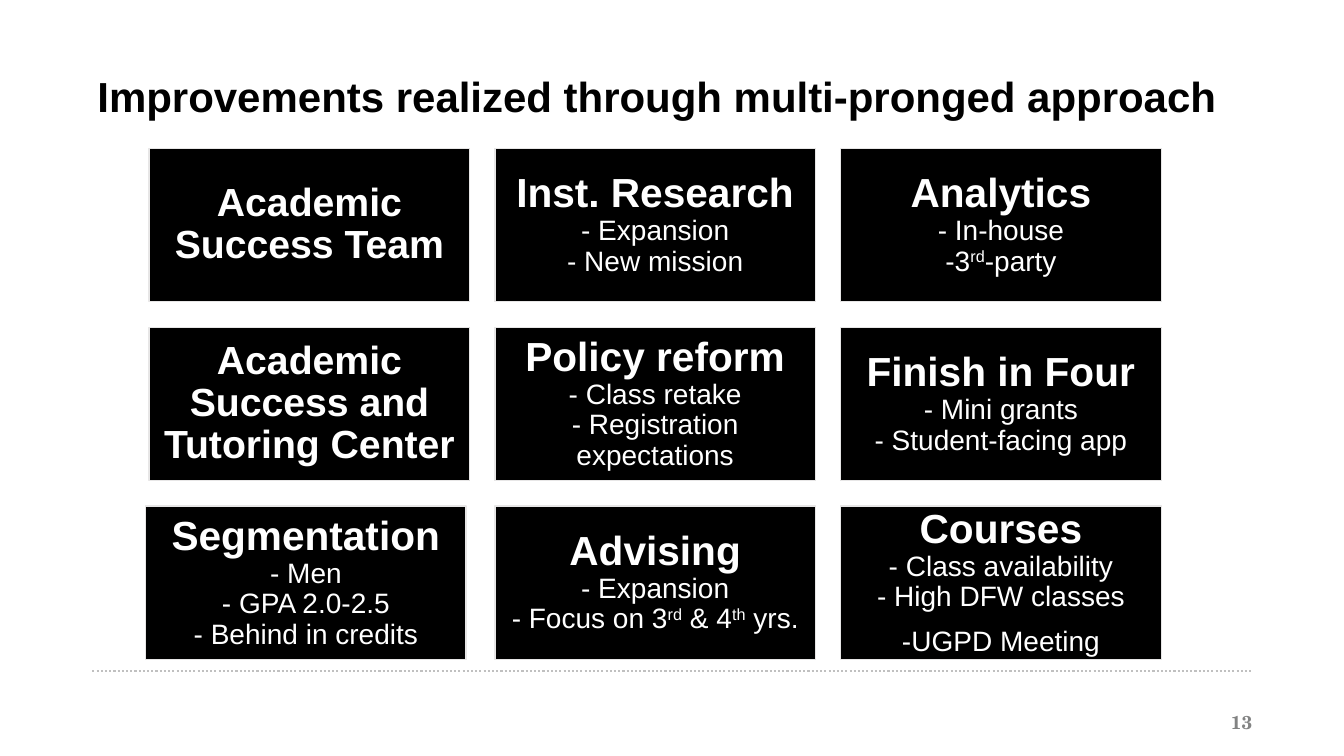
from pptx import Presentation
from pptx.dml.color import RGBColor
from pptx.enum.dml import MSO_LINE
from pptx.enum.shapes import MSO_CONNECTOR, MSO_SHAPE
from pptx.enum.text import MSO_ANCHOR, PP_ALIGN
from pptx.oxml.ns import qn
from pptx.util import Pt
from lxml.etree import SubElement

COLORS = {
    "black": "000000",
    "white": "FFFFFF",
    "border": "E7E6E6",
    "rule": "C0C0C0",
    "number": "828383",
}

CARDS = [
    [("Academic Success Team", []),
     ("Inst. Research", [["- Expansion", "- New mission"]]),
     ("Analytics", [["- In-house", "-3^rd^-party"]])],
    [("Academic Success and Tutoring Center", []),
     ("Policy reform", [["- Class retake", "- Registration expectations"]]),
     ("Finish in Four", [["- Mini grants", "- Student-facing app"]])],
    [("Segmentation", [["- Men", "- GPA 2.0-2.5", "- Behind in credits"]]),
     ("Advising", [["- Expansion", "- Focus on 3^rd^ & 4^th^ yrs."]]),
     ("Courses", [["- Class availability", "- High DFW classes"], ["-UGPD Meeting"]])],
]


def color(name):
    return RGBColor.from_string(COLORS[name])


def style(span, size, tint, bold=False, face="Arial"):
    span.font.name = face
    span.font.size = Pt(size)
    span.font.bold = bold
    span.font.color.rgb = color(tint)


def add_label(page, box, text, size, tint, face="Arial"):
    frame = page.shapes.add_textbox(*map(Pt, box)).text_frame
    frame.word_wrap = True
    frame.text = text
    style(frame.paragraphs[0].runs[0], size, tint, True, face)
    return frame


def add_title(page, box):
    frame = add_label(page, box, "Improvements realized through multi-pronged approach", 30, "black")
    frame.paragraphs[0].line_spacing = 0.8


def add_footer(page, box):
    left, top, width, height = box
    rule = page.shapes.add_connector(
        MSO_CONNECTOR.STRAIGHT, Pt(left), Pt(top), Pt(left + width), Pt(top))
    rule.line.color.rgb = color("rule")
    rule.line.width = Pt(1.5)
    rule.line.dash_style = MSO_LINE.ROUND_DOT
    SubElement(rule._element.spPr, qn("a:effectLst"))

    number_box = (left + width - 194, top + height - 29, 216 - 12, 29)
    frame = add_label(page, number_box, "13", 13.3, "number", "TeX Gyre Schola")
    frame.vertical_anchor = MSO_ANCHOR.MIDDLE
    frame.margin_right = Pt(9.5)
    frame.paragraphs[0].alignment = PP_ALIGN.RIGHT


def add_detail(para, line):
    for position, text in enumerate(line.split("^")):
        span = para.add_run()
        span.text = text
        style(span, 20, "white")
        if position % 2:
            span.font._element.set("baseline", "30000")


def add_card(page, box, heading, details):
    card = page.shapes.add_shape(MSO_SHAPE.RECTANGLE, *map(Pt, box))
    card.shadow.inherit = False
    card.fill.solid()
    card.fill.fore_color.rgb = color("black")
    card.line.color.rgb = color("border")
    card.line.width = Pt(1)

    frame = card.text_frame
    frame.word_wrap = True
    frame.vertical_anchor = MSO_ANCHOR.MIDDLE
    frame.margin_left = frame.margin_right = Pt(8.5)
    frame.margin_top = frame.margin_bottom = Pt(8.5)
    frame.text = heading
    para = frame.paragraphs[0]
    style(para.runs[0], 29 if details else 28, "white", True)

    for block, lines in enumerate(details):
        if block:
            para = frame.add_paragraph()
            para.space_before = Pt(10)
        for position, line in enumerate(lines):
            if position or not block:
                para.add_line_break()
            add_detail(para, line)

    for para in frame.paragraphs:
        para.alignment = PP_ALIGN.CENTER
        para.line_spacing = 0.9


def add_card_grid(page, box):
    left, top, width, height = box
    card_width, card_height = 229, 109.5
    column_step = (width - card_width) / 2
    row_step = (height - card_height) / 2
    for row, cards in enumerate(CARDS):
        for column, (heading, details) in enumerate(cards):
            nudge = -2.5 if heading == "Segmentation" else 0
            card_box = (left + column * column_step + nudge, top + row * row_step,
                        card_width, card_height)
            add_card(page, card_box, heading, details)


def main():
    deck = Presentation()
    deck.slide_width, deck.slide_height = Pt(960), Pt(540)
    page = deck.slides.add_slide(deck.slide_layouts[6])
    add_footer(page, (66, 479.5, 828, 50.5))
    add_title(page, (62.5, 53.5, 839, 65))
    add_card_grid(page, (106.5, 106, 723, 365))
    deck.save("out.pptx")


if __name__ == "__main__":
    main()
